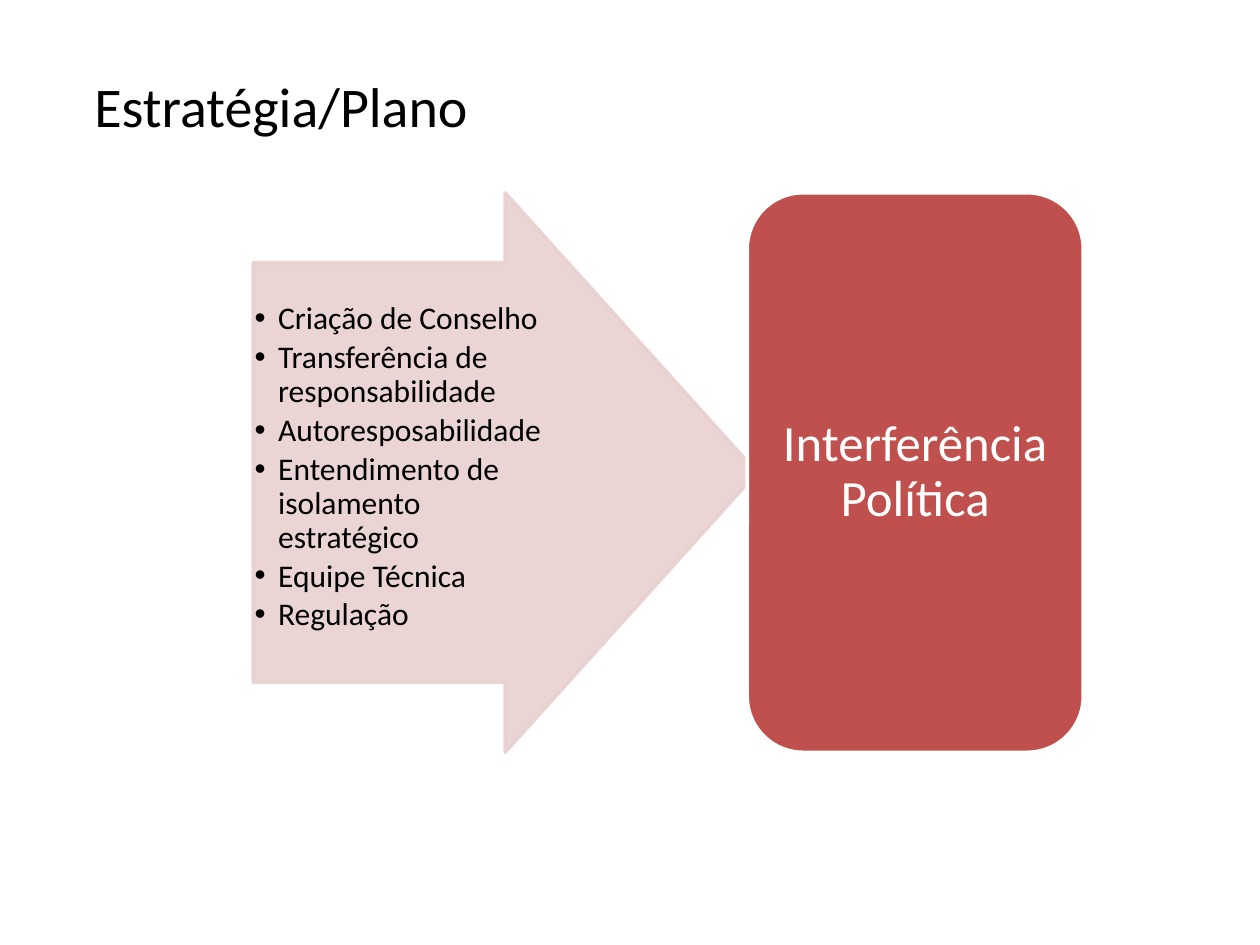
from dataclasses import dataclass

from lxml import etree
from pptx import Presentation
from pptx.dml.color import RGBColor
from pptx.enum import shapes, text
from pptx.oxml import ns
from pptx.slide import Slide
from pptx.util import Pt

BLACK, WHITE, RED, PINK = "000000", "FFFFFF", "C0504D", "E8D0D0"
ACTIONS = [
    "Criação de Conselho",
    "Transferência de responsabilidade",
    "Autoresposabilidade",
    "Entendimento de isolamento estratégico",
    "Equipe Técnica",
    "Regulação",
]


def color(hex_value):
    return RGBColor.from_string(hex_value)


def set_opacity(parent, percent):
    """Add an alpha value to the solid fill directly inside an XML element."""
    rgb = parent.find(ns.qn("a:solidFill") + "/" + ns.qn("a:srgbClr"))
    etree.SubElement(rgb, ns.qn("a:alpha"), val=str(percent * 1000))


def add_bullet(para, indent):
    properties = para._p.get_or_add_pPr()
    properties.set("marL", str(Pt(indent)))
    properties.set("indent", str(-Pt(indent)))
    etree.SubElement(properties, ns.qn("a:buFont"), typeface="Arial")
    etree.SubElement(properties, ns.qn("a:buChar"), char="•")


@dataclass
class Painter:
    page: Slide
    font: str = "Calibri"
    outline: float = 2

    def add_text(self, shape, lines, size, hex_value, margins, align=text.PP_ALIGN.LEFT,
                 anchor=text.MSO_ANCHOR.TOP, spacing=1.0, after=0, indent=0):
        """Fill a shape with paragraphs; a positive indent makes them bullets."""
        frame = shape.text_frame
        frame.word_wrap = True
        frame.vertical_anchor = anchor
        frame.margin_left = frame.margin_right = Pt(margins[0])
        frame.margin_top = frame.margin_bottom = Pt(margins[1])
        for number, line in enumerate(lines):
            para = frame.add_paragraph() if number else frame.paragraphs[0]
            para.text = line
            para.alignment = align
            para.line_spacing = spacing
            para.space_after = Pt(after)
            if indent:
                add_bullet(para, indent)
            para.font.name = self.font
            para.font.size = Pt(size)
            para.font.color.rgb = color(hex_value)

    def text_box(self, bounds, lines, size, hex_value, margins, **layout):
        box = self.page.shapes.add_textbox(*map(Pt, bounds))
        self.add_text(box, lines, size, hex_value, margins, **layout)

    def shape(self, kind, bounds, fill, line, opacity=100):
        shape = self.page.shapes.add_shape(kind, *map(Pt, bounds))
        shape.shadow.inherit = False
        shape.fill.solid()
        shape.fill.fore_color.rgb = color(fill)
        shape.line.color.rgb = color(line)
        shape.line.width = Pt(self.outline)
        if opacity < 100:
            properties = shape._element.spPr
            set_opacity(properties, opacity)
            set_opacity(properties.find(ns.qn("a:ln")), opacity)
        return shape


def main():
    deck = Presentation()
    deck.slide_width, deck.slide_height = Pt(720), Pt(540)
    painter = Painter(deck.slides.add_slide(deck.slide_layouts[6]))

    painter.text_box((46.8, 37.4, 626.4, 375.8), ["Estratégia/Plano"], 32, BLACK, (7.2, 3.6))

    top, height = 110.2, 319.7
    arrow = painter.shape(shapes.MSO_SHAPE.RIGHT_ARROW, (144.7, top, 288, height),
                          PINK, PINK, opacity=90)
    arrow.adjustments[0] = 0.75
    painter.text_box((144.7, 172.2, 180, 217), ACTIONS, 18, BLACK, (0.8, 0.8),
                     spacing=0.9, after=2.7, indent=13.5)

    obstacle = painter.shape(shapes.MSO_SHAPE.ROUNDED_RECTANGLE, (427, top, 192, height),
                             RED, WHITE)
    painter.add_text(obstacle, ["Interferência Política"], 29, WHITE, (8.6, 4.3),
                     align=text.PP_ALIGN.CENTER, anchor=text.MSO_ANCHOR.MIDDLE, spacing=0.9)

    deck.save("out.pptx")


if __name__ == "__main__":
    main()
